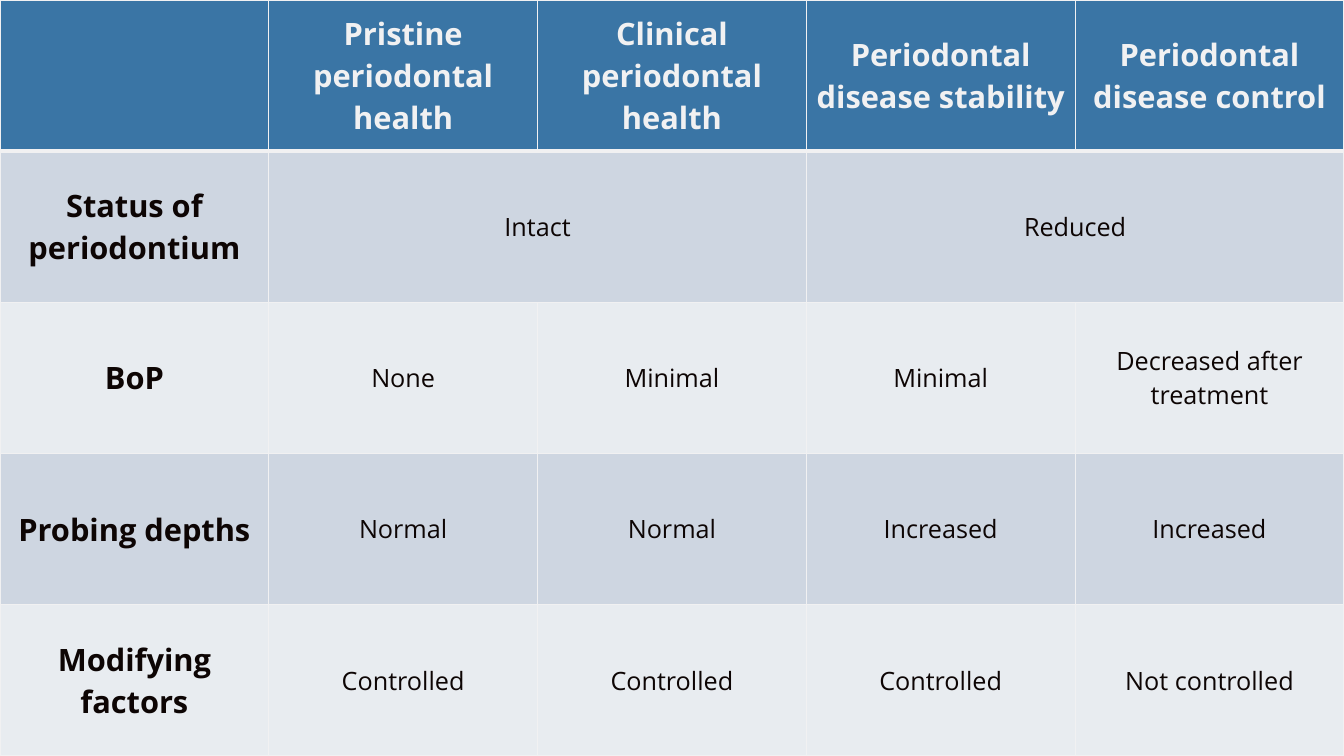
import pptx
import pptx.dml.color
import pptx.enum.text
import pptx.oxml
import pptx.oxml.ns
import pptx.util

Inches = pptx.util.Inches

PALE = "F1F1F2"
INK = "0D0504"
HEADER_FILL = "3A75A5"
BAND_FILLS = ("CED6E1", "E8ECF0")

ROWS = [
    ["", "Pristine periodontal health", "Clinical periodontal health",
     "Periodontal disease stability", "Periodontal disease control"],
    ["Status of periodontium", "Intact", "", "Reduced", ""],
    ["BoP", "None", "Minimal", "Minimal", "Decreased after treatment"],
    ["Probing depths", "Normal", "Normal", "Increased", "Increased"],
    ["Modifying factors", "Controlled", "Controlled", "Controlled", "Not controlled"],
]
STATUS_ROW = 1
STATUS_SPANS = ((1, 2), (3, 4))


def color(value):
    return pptx.dml.color.RGBColor.from_string(value)


def write_text(frame, text, size=18, bold=False, fill=INK):
    paragraph = frame.paragraphs[0]
    paragraph.alignment = pptx.enum.text.PP_ALIGN.CENTER
    run = paragraph.add_run()
    run.text = text
    run.font.name = "Open Sans"
    run.font.size = pptx.util.Pt(size)
    run.font.bold = bold
    run.font.color.rgb = color(fill)


def set_borders(cell, top=1, bottom=1):
    properties = cell._tc.get_or_add_tcPr()
    for side, width in (("L", 1), ("R", 1), ("T", top), ("B", bottom)):
        properties.append(pptx.oxml.parse_xml(
            f'<a:ln{side} {pptx.oxml.ns.nsdecls("a")} w="{pptx.util.Pt(width)}">'
            f'<a:solidFill><a:srgbClr val="{PALE}"/></a:solidFill></a:ln{side}>'))


def format_cell(cell, text, row, column):
    is_header = row == 0
    set_borders(cell, top=3 if row == 1 else 1, bottom=3 if is_header else 1)
    cell.fill.solid()
    cell.fill.fore_color.rgb = color(HEADER_FILL if is_header else BAND_FILLS[(row - 1) % 2])
    cell.vertical_anchor = pptx.enum.text.MSO_ANCHOR.MIDDLE
    if text:
        is_label = is_header or column == 0
        write_text(cell.text_frame, text, size=22 if is_label else 18,
                   bold=is_label, fill=PALE if is_header else INK)


def add_health_table(slide, left, top, width, height):
    row_count, column_count = len(ROWS), len(ROWS[0])
    table = slide.shapes.add_table(row_count, column_count, left, top, width, height).table
    table.first_column = True
    for column in table.columns:
        column.width = int(width / column_count)
    for row in table.rows:
        row.height = int(height / row_count)
    for row, texts in enumerate(ROWS):
        for column, text in enumerate(texts):
            format_cell(table.cell(row, column), text, row, column)
    for first, last in STATUS_SPANS:
        table.cell(STATUS_ROW, first).merge(table.cell(STATUS_ROW, last))


def main():
    presentation = pptx.Presentation()
    presentation.slide_width = Inches(13.33)
    presentation.slide_height = Inches(7.5)
    slide = presentation.slides.add_slide(presentation.slide_layouts.get_by_name("Blank"))
    slide.background.fill.solid()
    slide.background.fill.fore_color.rgb = color(PALE)
    add_health_table(slide, 0, 0, presentation.slide_width, presentation.slide_height)
    presentation.save("out.pptx")


if __name__ == "__main__":
    main()
